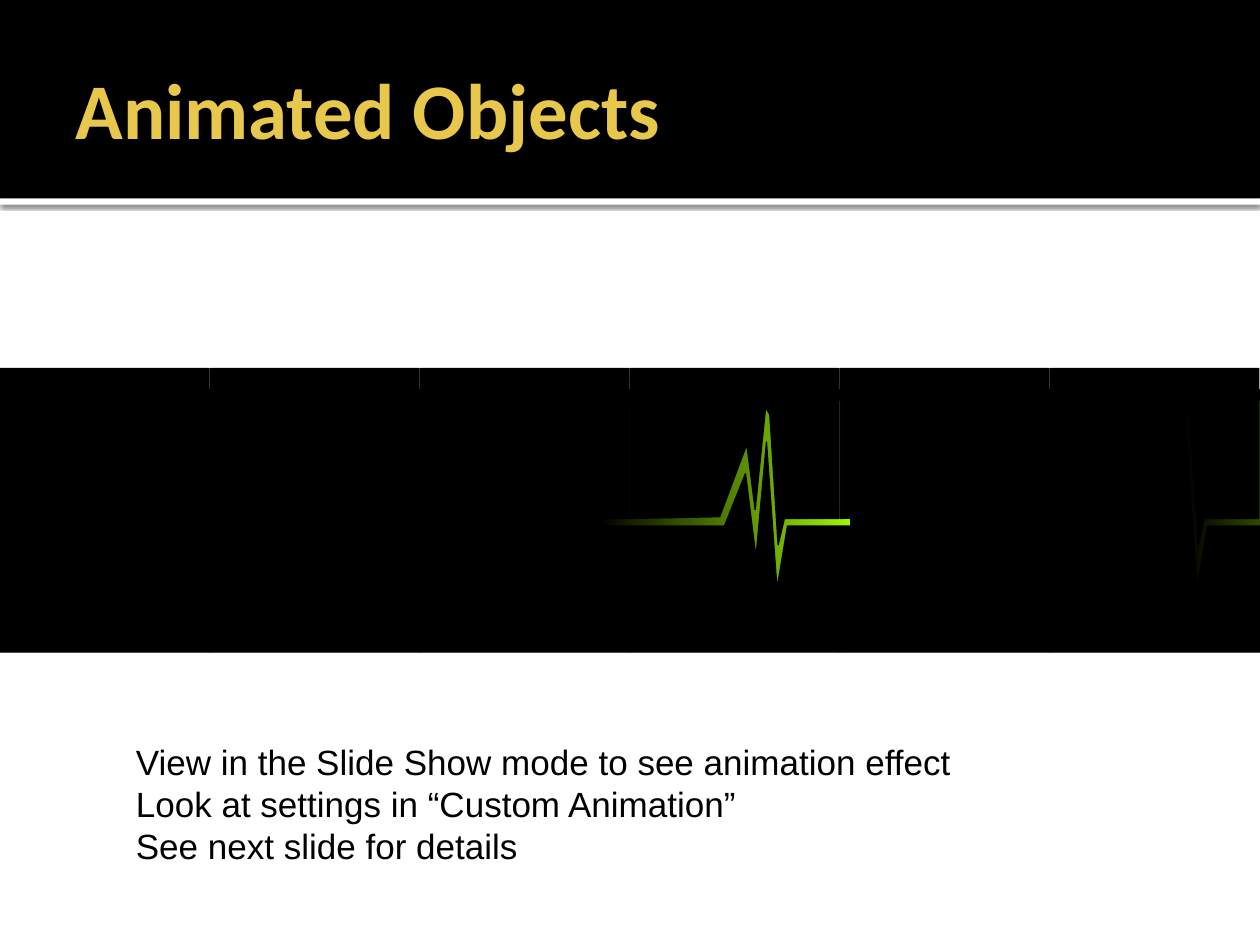
from lxml.etree import SubElement
from pptx import Presentation
from pptx.dml.color import RGBColor
from pptx.enum.shapes import MSO_SHAPE
from pptx.enum.text import MSO_ANCHOR, MSO_AUTO_SIZE, PP_ALIGN
from pptx.oxml.ns import qn
from pptx.util import Inches, Pt

WIDE, HIGH = 10, 7.5
BEATS = 6
BLACK, WHITE, GOLD, LIME = "000000", "FFFFFF", "E8C84C", "9FF602"
LOWER = [(0, 0.4), (0.45, 0.4), (0.55, 0.15), (0.6, 0.55), (0.65, 0),
         (0.7, 0.7), (0.75, 0.4), (1, 0.4), (1, 1), (0, 1)]
UPPER = [(0, 0.85), (0.43, 0.84), (0.56, 0.43), (0.6, 0.8), (0.65, 0.22),
         (0.67, 0.26), (0.71, 1), (0.74, 0.85), (1, 0.85), (1, 0), (0, 0)]


def paint(color):
    """Turn a hex string into a colour."""
    return RGBColor.from_string(color)


def place(shape, box):
    """Set a shape to a box of left, top, width and height in inches."""
    shape.left, shape.top, shape.width, shape.height = map(Inches, box)


def coat(shape, fill, line=None):
    """Give a shape a plain fill, an optional thin line and no shadow."""
    shape.shadow.inherit = False
    shape.fill.solid()
    shape.fill.fore_color.rgb = paint(fill)
    if line:
        shape.line.color.rgb = paint(line)
        shape.line.width = Pt(0.75)
    else:
        shape.line.fill.background()


def block(slide, box, fill, line=None):
    """Add a rectangle."""
    shape = slide.shapes.add_shape(MSO_SHAPE.RECTANGLE, *map(Inches, box))
    coat(shape, fill, line)
    return shape


def write(frame, text, size, font, color, bold=False):
    """Fill a text frame, one paragraph to each line of text."""
    frame.text = text
    for para in frame.paragraphs:
        para.alignment = PP_ALIGN.LEFT
        face = para.font
        face.size, face.name, face.bold = Pt(size), font, bold
        face.color.rgb = paint(color)


def shade(shape):
    """Drop a soft shadow below a shape."""
    effects = shape.element.spPr.find(qn("a:effectLst"))
    outer = SubElement(effects, qn("a:outerShdw"), blurRad=str(Pt(2.5)),
                       dist=str(Pt(0.8)), dir="5400000", rotWithShape="0")
    tint = SubElement(outer, qn("a:srgbClr"), val=BLACK)
    SubElement(tint, qn("a:alpha"), val="60000")


def header(slide, box):
    """Draw the title band with its white rule and the title."""
    left, top, width, height = box
    shade(block(slide, (left, top + height, width, 0.05), WHITE))
    block(slide, box, BLACK)
    title = slide.shapes.title
    title.element.getparent().append(title.element)
    place(title, (left + width * 0.05, top + 0.17, width * 0.9, 1.37))
    frame = title.text_frame
    frame.word_wrap = True
    frame.auto_size = MSO_AUTO_SIZE.NONE
    frame.vertical_anchor = MSO_ANCHOR.MIDDLE
    frame.margin_left = Inches(0.1)
    frame.margin_right = frame.margin_top = frame.margin_bottom = Inches(0.05)
    write(frame, "Animated Objects", 45, "Calibri", GOLD, bold=True)


def glow(slide, box):
    """Add a light that fades in from black to lime."""
    shape = block(slide, box, BLACK, BLACK)
    shape.fill.gradient()
    shape.fill.gradient_angle = 0
    for stop, color, spot in zip(shape.fill.gradient_stops, (BLACK, LIME), (0, 1)):
        stop.color.rgb = paint(color)
        stop.position = spot


def mask(group, box, points):
    """Add a black outline whose points are shares of its box."""
    left, top, width, height = box
    dots = [(Inches(left + x * width), Inches(top + y * height)) for x, y in points]
    pen = group.shapes.build_freeform(*dots[0])
    pen.add_line_segments(dots[1:], close=True)
    coat(pen.convert_to_shape(), BLACK, BLACK)


def pulse(slide, box):
    """Draw the monitor: lights seen through a row of heartbeat slits."""
    left, top, width, height = box
    block(slide, (left, top + 0.17, width, 1.67), BLACK, BLACK)
    for share in (0.94, 0.475):
        glow(slide, (left + width * share, top + 0.25, 2, 1.5))
    step = width / BEATS
    for beat in range(BEATS):
        group = slide.shapes.add_group_shape()
        start = left + beat * step
        mask(group, (start, top + height - step, step, step), LOWER)
        mask(group, (start, top, step - 0.01, 1.4), UPPER)


def notes(slide, box):
    """Add the lines of advice."""
    frame = slide.shapes.add_textbox(*map(Inches, box)).text_frame
    frame.word_wrap = False
    frame.auto_size = MSO_AUTO_SIZE.SHAPE_TO_FIT_TEXT
    lines = ("View in the Slide Show mode to see animation effect",
             "Look at settings in “Custom Animation”",
             "See next slide for details")
    write(frame, "\n".join(lines), 20, "Arial", BLACK)


def main():
    """Build the slide and save it."""
    deck = Presentation()
    deck.slide_width, deck.slide_height = Inches(WIDE), Inches(HIGH)
    slide = deck.slides.add_slide(deck.slide_layouts[5])
    slide.background.fill.solid()
    slide.background.fill.fore_color.rgb = paint(WHITE)
    header(slide, (0, 0, WIDE, HIGH * 0.21))
    pulse(slide, (0, HIGH * 0.39, WIDE, HIGH * 0.3))
    notes(slide, (0.98, 5.83, 6.72, 1.11))
    deck.save("out.pptx")


if __name__ == "__main__":
    main()
